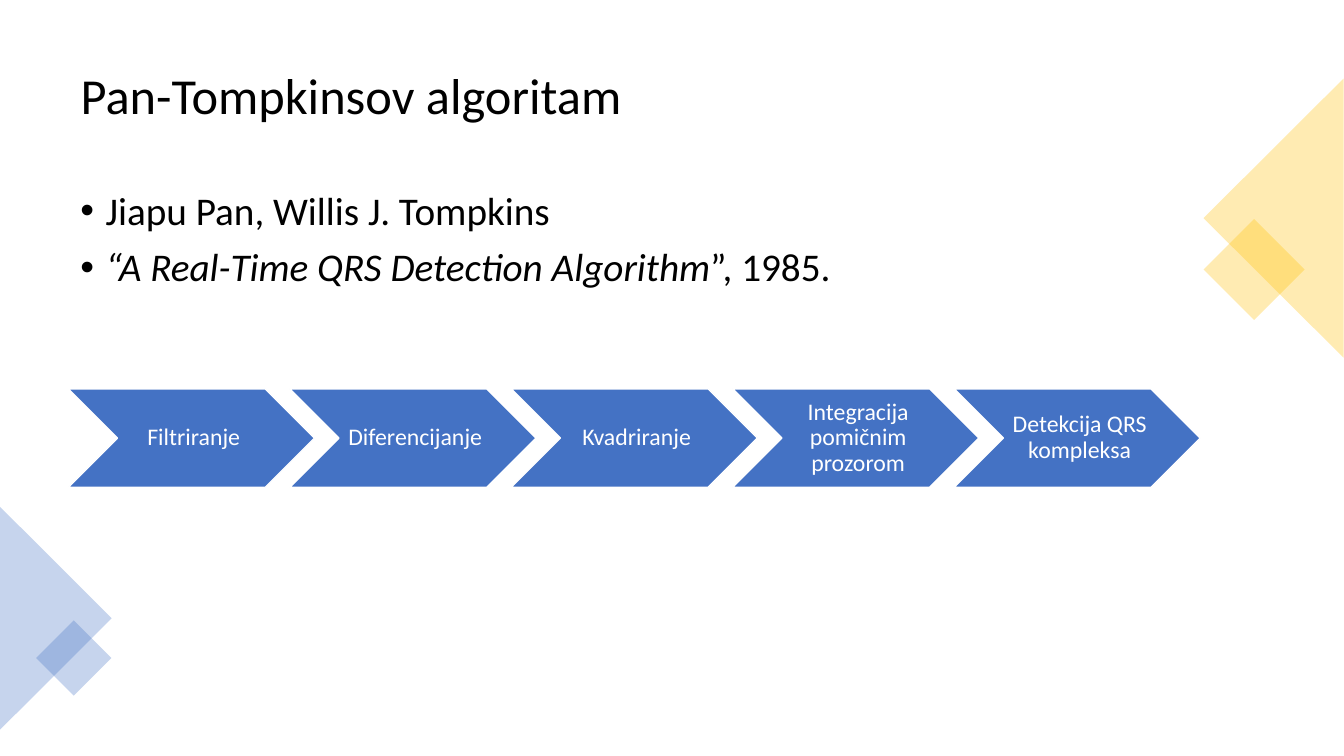
from lxml.etree import SubElement
from pptx import Presentation
from pptx.dml.color import RGBColor
from pptx.enum.shapes import MSO_SHAPE as Preset
from pptx.enum.text import MSO_ANCHOR as Anchor, PP_ALIGN as Align
from pptx.oxml.ns import qn
from pptx.util import Pt

BLUE, GOLD, WHITE, BLACK = "4472C4", "FFC000", "FFFFFF", "000000"


def paint(color_format, color):
    color_format.rgb = RGBColor.from_string(color)


def style_text(paragraph, size, color):
    paragraph.line_spacing = 0.9
    paragraph.font.name = "Calibri"
    paragraph.font.size = Pt(size)
    paint(paragraph.font.color, color)


presentation = Presentation()
presentation.slide_width, presentation.slide_height = Pt(960), Pt(540)
slide = presentation.slides.add_slide(presentation.slide_layouts[5])

# Title
title = slide.shapes.title
title.left, title.top, title.width, title.height = Pt(50.4), Pt(25.2), Pt(859), Pt(89.3)
title.text_frame.text = "Pan-Tompkinsov algoritam"
title.text_frame.vertical_anchor = Anchor.MIDDLE
title_paragraph = title.text_frame.paragraphs[0]
title_paragraph.alignment = Align.LEFT
style_text(title_paragraph, 36, BLACK)

# Bulleted source of the algorithm, as (text, italic) runs
references = [
    [("Jiapu Pan, Willis J. Tompkins", False)],
    [("“A Real-Time QRS Detection Algorithm", True), ("”, 1985.", False)],
]
body = slide.shapes.add_textbox(Pt(50.4), Pt(133.2), Pt(859), Pt(114.5)).text_frame
body.word_wrap = True
for index, runs in enumerate(references):
    paragraph = body.add_paragraph() if index else body.paragraphs[0]
    style_text(paragraph, 28, BLACK)
    paragraph.space_before = Pt(10)
    for text, italic in runs:
        run = paragraph.add_run()
        run.text = text
        run.font.italic = italic
    properties = paragraph._p.get_or_add_pPr()
    properties.set("marL", str(Pt(18)))
    properties.set("indent", str(-Pt(18)))
    bullet_font = properties.makeelement(qn("a:buFont"), {"typeface": "Arial"})
    bullet = properties.makeelement(qn("a:buChar"), {"char": "•"})
    properties.find(qn("a:spcBef")).addnext(bullet_font)
    bullet_font.addnext(bullet)

# Translucent corner decorations: preset, left, top, width, height, rotation, color
decorations = [
    (Preset.RECTANGLE, 870.3, 167, 51, 51, 45, GOLD),
    (Preset.ISOSCELES_TRIANGLE, 810, 105.8, 199.4, 100, 270, GOLD),
    (Preset.ISOSCELES_TRIANGLE, -39.7, 401.8, 159.2, 79.7, 90, BLUE),
    (Preset.RECTANGLE, 33.7, 451, 38, 38, 45, BLUE),
]
for preset, left, top, width, height, rotation, color in decorations:
    shape = slide.shapes.add_shape(preset, Pt(left), Pt(top), Pt(width), Pt(height))
    shape.rotation = rotation
    shape.shadow.inherit = False
    shape.line.fill.background()
    shape.fill.solid()
    paint(shape.fill.fore_color, color)
    color_element = shape._element.spPr.find(qn("a:solidFill"))[0]
    SubElement(color_element, qn("a:alpha"), val="30000")

# Chain of processing steps
steps = ["Filtriranje", "Diferencijanje", "Kvadriranje",
         "Integracija pomičnim prozorom", "Detekcija QRS kompleksa"]
for index, step in enumerate(steps):
    chevron = slide.shapes.add_shape(
        Preset.CHEVRON, Pt(48.8 + index * 158.2), Pt(277.8), Pt(175.8), Pt(70.3))
    chevron.shadow.inherit = False
    chevron.fill.solid()
    paint(chevron.fill.fore_color, BLUE)
    paint(chevron.line.color, WHITE)
    chevron.line.width = Pt(1)
    frame = chevron.text_frame
    frame.word_wrap = True
    frame.vertical_anchor = Anchor.MIDDLE
    frame.margin_left = Pt(5)
    frame.margin_top = frame.margin_right = frame.margin_bottom = Pt(1.5)
    frame.text = step
    frame.paragraphs[0].alignment = Align.CENTER
    style_text(frame.paragraphs[0], 17, WHITE)

presentation.save("out.pptx")
